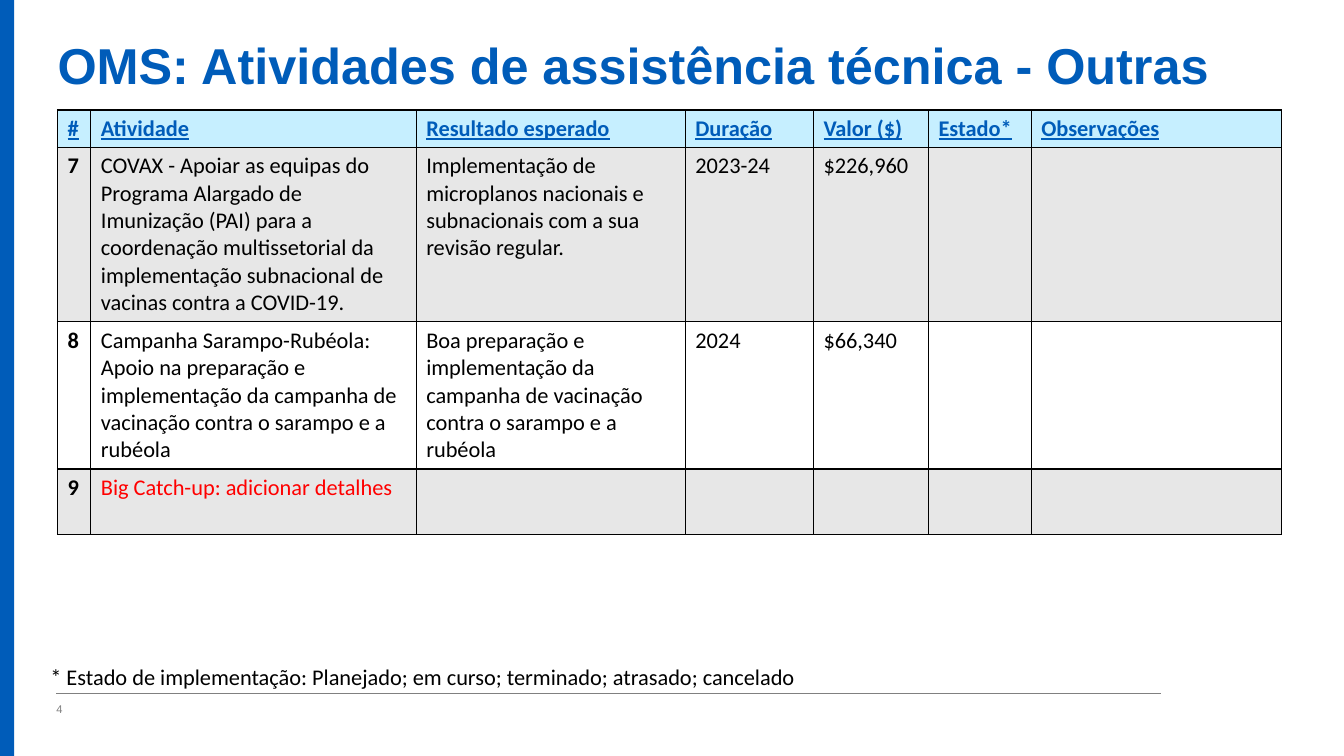
import lxml.etree
import pptx
import pptx.dml.color
import pptx.enum.shapes
import pptx.enum.text
import pptx.oxml.ns
import pptx.util

Cm = pptx.util.Cm
Pt = pptx.util.Pt
ANCHOR = pptx.enum.text.MSO_ANCHOR
AUTO_SIZE = pptx.enum.text.MSO_AUTO_SIZE

COLORS = {
    "blue": "005CB9",
    "header": "C6EFFF",
    "band": "E7E7E7",
    "white": "FFFFFF",
    "black": "000000",
    "red": "FF0000",
    "gray": "808080",
}

COLUMN_WIDTHS = [0.84, 8.2, 6.78, 3.23, 2.9, 2.59, 6.3]
ROW_HEIGHTS = [0.94, 4.39, 3.71, 1.65]
ACTIVITIES = [
    ["#", "Atividade", "Resultado esperado", "Duração", "Valor ($)", "Estado*", "Observações"],
    ["7", "COVAX - Apoiar as equipas do Programa Alargado de Imunização (PAI) para a "
     "coordenação multissetorial da implementação subnacional de vacinas contra a COVID-19.",
     "Implementação de microplanos nacionais e subnacionais com a sua revisão regular.",
     "2023-24", "$226,960", "", ""],
    ["8", "Campanha Sarampo-Rubéola: Apoio na preparação e implementação da campanha de "
     "vacinação contra o sarampo e a rubéola",
     "Boa preparação e implementação da campanha de vacinação contra o sarampo e a rubéola",
     "2024", "$66,340", "", ""],
    ["9", "Big Catch-up: adicionar detalhes", "", "", "", "", ""],
]
PENDING_CELL = (3, 1)


def rgb(name):
    return pptx.dml.color.RGBColor.from_string(COLORS[name])


class SlideBuilder:
    def __init__(self, slide):
        self.slide = slide
        self.body_font = "Calibri"
        self.title_font = "Arial"
        self.body_size = 16

    def style(self, para, font, size, color, bold=False, underline=False):
        para.font.name = font
        para.font.size = Pt(size)
        para.font.color.rgb = rgb(color)
        para.font.bold = bold
        para.font.underline = underline

    def clear_margins(self, frame):
        frame.margin_left = frame.margin_right = 0
        frame.margin_top = frame.margin_bottom = 0

    def title(self, text, left, top, width, height):
        title = self.slide.shapes.title
        title.left, title.top = Cm(left), Cm(top)
        title.width, title.height = Cm(width), Cm(height)
        frame = title.text_frame
        frame.text = text
        frame.auto_size = AUTO_SIZE.NONE
        frame.vertical_anchor = ANCHOR.TOP
        self.clear_margins(frame)
        para = frame.paragraphs[0]
        para.alignment = pptx.enum.text.PP_ALIGN.LEFT
        para.line_spacing = 0.9
        self.style(para, self.title_font, 36, "blue", bold=True)

    def bar(self, left, top, width, height, color):
        bar = self.slide.shapes.add_shape(
            pptx.enum.shapes.MSO_SHAPE.RECTANGLE, Cm(left), Cm(top), Cm(width), Cm(height))
        bar.shadow.inherit = False
        bar.fill.solid()
        bar.fill.fore_color.rgb = rgb(color)
        bar.line.fill.background()

    def rule(self, left, right, y, color, width):
        rule = self.slide.shapes.add_connector(
            pptx.enum.shapes.MSO_CONNECTOR.STRAIGHT, Cm(left), Cm(y), Cm(right), Cm(y))
        rule.line.color.rgb = rgb(color)
        rule.line.width = Pt(width)
        lxml.etree.SubElement(rule._element.spPr, pptx.oxml.ns.qn("a:effectLst"))

    def text(self, text, left, top, width, height, font, size, color):
        box = self.slide.shapes.add_textbox(Cm(left), Cm(top), Cm(width), Cm(height))
        box.text_frame.text = text
        self.style(box.text_frame.paragraphs[0], font, size, color)
        return box.text_frame

    def borders(self, cell, color, width):
        properties = cell._tc.get_or_add_tcPr()
        qn = pptx.oxml.ns.qn
        for side in ("a:lnL", "a:lnR", "a:lnT", "a:lnB"):
            line = lxml.etree.SubElement(properties, qn(side), w=str(Pt(width)))
            fill = lxml.etree.SubElement(line, qn("a:solidFill"))
            lxml.etree.SubElement(fill, qn("a:srgbClr"), val=COLORS[color])

    def table(self, rows, left, top, widths, heights):
        table = self.slide.shapes.add_table(
            len(rows), len(widths), Cm(left), Cm(top), Cm(sum(widths)), Cm(sum(heights))).table
        table.horz_banding = False
        for column, width in zip(table.columns, widths):
            column.width = Cm(width)
        for row, height in zip(table.rows, heights):
            row.height = Cm(height)
        for r, row in enumerate(rows):
            is_header = r == 0
            fill = "header" if is_header else "band" if r % 2 else "white"
            for c, text in enumerate(row):
                cell = table.cell(r, c)
                self.borders(cell, "black", 1)
                cell.fill.solid()
                cell.fill.fore_color.rgb = rgb(fill)
                cell.text = text
                color = "blue" if is_header else "red" if (r, c) == PENDING_CELL else "black"
                self.style(cell.text_frame.paragraphs[0], self.body_font, self.body_size, color,
                           bold=is_header or c == 0, underline=is_header)


def main():
    deck = pptx.Presentation()
    deck.slide_width, deck.slide_height = Cm(33.87), Cm(19.05)
    page = SlideBuilder(deck.slides.add_slide(deck.slide_layouts[5]))

    # Side bar and footer rule
    page.bar(0, 0, 0.36, 19.05, "blue")
    page.rule(1.42, 29.26, 17.48, "gray", 0.5)

    # Title and activities
    page.title("OMS: Atividades de assistência técnica - Outras", 1.45, 1.02, 30.99, 1.65)
    page.table(ACTIVITIES, 1.45, 2.77, COLUMN_WIDTHS, ROW_HEIGHTS)

    # Page number
    number = page.text("4", 1.42, 17.65, 0.74, 0.38, page.title_font, 8, "gray")
    number.word_wrap = True
    number.vertical_anchor = ANCHOR.BOTTOM
    page.clear_margins(number)

    # Status note
    note = page.text(
        "* Estado de implementação: Planejado; em curso; terminado; atrasado; cancelado",
        1.02, 16.59, 19.51, 0.94, page.body_font, page.body_size, "black")
    note.word_wrap = False
    note.auto_size = AUTO_SIZE.SHAPE_TO_FIT_TEXT

    deck.save("out.pptx")


if __name__ == "__main__":
    main()
